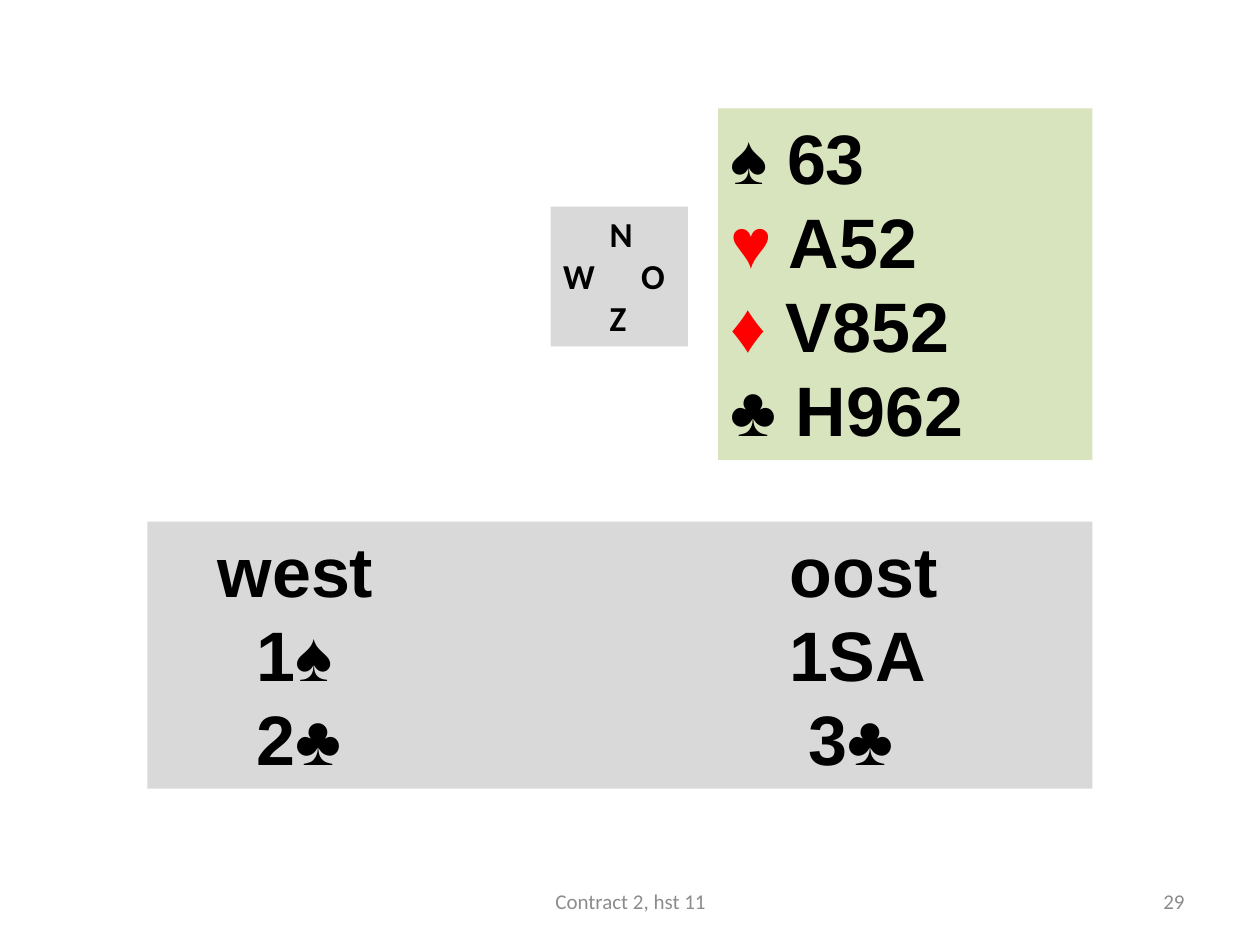
from dataclasses import dataclass

from lxml import etree
from pptx import Presentation
from pptx import util as u
from pptx.dml.color import RGBColor
from pptx.enum import shapes, text
from pptx.oxml.ns import qn

BLACK, RED, GREY = "000000", "FF0000", "8C8C8C"
LEFT, MID, RIGHT = text.PP_ALIGN.LEFT, text.PP_ALIGN.CENTER, text.PP_ALIGN.RIGHT


@dataclass
class Box:
    x: float
    y: float
    w: float
    h: float
    fill: str = ""


@dataclass
class Line:
    runs: list[tuple[str, str]]
    tabs: tuple[float, ...] = ()


def color(code: str) -> RGBColor:
    return RGBColor.from_string(code)


def plain(words: str, *tabs: float, ink: str = BLACK) -> Line:
    return Line([(words, ink)], tabs)


def set_tabs(para, stops: tuple[float, ...]) -> None:
    """Add left tab stops, in inches from the text edge."""
    tabs = etree.SubElement(para._p.get_or_add_pPr(), qn("a:tabLst"))
    for stop in stops:
        etree.SubElement(tabs, qn("a:tab"), pos=str(u.Inches(stop)), algn="l")


def write(frame, lines: list[Line], *, size: int, font: str = "Arial",
          bold: bool = True, align=LEFT) -> None:
    for i, line in enumerate(lines):
        para = frame.add_paragraph() if i else frame.paragraphs[0]
        para.alignment = align
        if line.tabs:
            set_tabs(para, line.tabs)
        for words, ink in line.runs:
            run = para.add_run()
            run.text = words
            run.font.size, run.font.name = u.Pt(size), font
            run.font.bold = bold
            run.font.color.rgb = color(ink)


def draw(slide, box: Box, lines: list[Line], **form) -> None:
    """Draw a filled panel, or a bare text box when there is no fill."""
    spot = [u.Inches(n) for n in (box.x, box.y, box.w, box.h)]
    if box.fill:
        shape = slide.shapes.add_shape(shapes.MSO_SHAPE.RECTANGLE, *spot)
        shape.shadow.inherit = False
        shape.fill.solid()
        shape.fill.fore_color.rgb = color(box.fill)
        shape.line.fill.background()
        anchor, fit = text.MSO_ANCHOR.TOP, text.MSO_AUTO_SIZE.SHAPE_TO_FIT_TEXT
    else:
        shape = slide.shapes.add_textbox(*spot)
        anchor, fit = text.MSO_ANCHOR.MIDDLE, text.MSO_AUTO_SIZE.NONE
    frame = shape.text_frame
    frame.word_wrap = True
    frame.vertical_anchor, frame.auto_size = anchor, fit
    write(frame, lines, **form)


def main() -> None:
    deck = Presentation()
    deck.slide_width, deck.slide_height = u.Inches(10), u.Inches(7.5)
    slide = deck.slides.add_slide(deck.slide_layouts[6])

    # Compass
    draw(slide, Box(4.37, 1.64, 1.09, 1.11, "D9D9D9"),
         [plain("\tN", 0.37), plain("W\tO", 0.62), plain("\tZ", 0.37)],
         size=20, font="Calibri")

    # Bidding
    draw(slide, Box(1.17, 4.14, 7.5, 2.12, "D9D9D9"),
         [plain("\twest\toost", 0.46, 5),
          plain("\t1♠\t1SA", 0.77, 5),
          plain("\t2♣\t3♣", 0.77, 5.15)], size=40)

    # Footer
    foot = dict(size=12, font="Calibri", bold=False)
    draw(slide, Box(7.17, 6.95, 2.33, 0.4), [plain("29", ink=GREY)],
         align=RIGHT, **foot)
    draw(slide, Box(3.42, 6.95, 3.17, 0.4),
         [plain("Contract 2, hst 11", ink=GREY)], align=MID, **foot)

    # Hand of east
    hand = [("♠", BLACK, "63"), ("♥", RED, "A52"),
            ("♦", RED, "V852"), ("♣", BLACK, "H962")]
    draw(slide, Box(5.7, 0.86, 2.97, 2.79, "D7E4BD"),
         [Line([(suit, ink), (f" {cards}", BLACK)])
          for suit, ink, cards in hand], size=40)

    deck.save("out.pptx")


if __name__ == "__main__":
    main()
